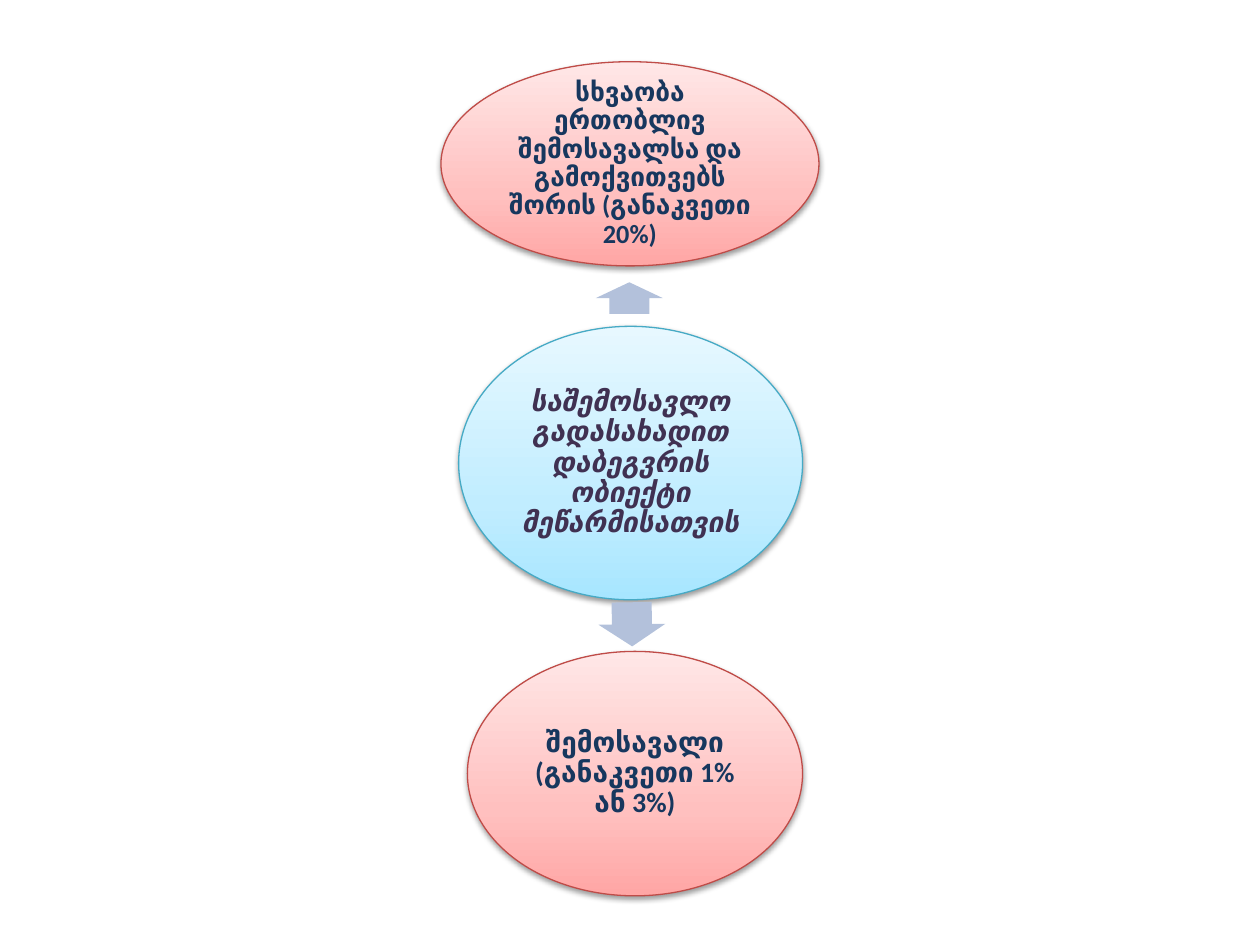
"""Build a slide showing the two income tax bases for an entrepreneur."""
import pptx
import pptx.dml.color
import pptx.enum.shapes
import pptx.enum.text
import pptx.oxml
import pptx.oxml.ns
import pptx.util
from pptx.util import Inches

COLORS = {
    "red_line": "BF4C48", "blue_line": "46AAC5", "arrow": "B3C1DB",
    "navy": "17375E", "purple": "403152", "shadow": "000000",
}
GRADIENTS = {
    "red": ["FFA6A5", "FFC0BF", "FFE7E7"],
    "blue": ["A7E6FF", "C1EDFF", "E7F8FF"],
}
NS = pptx.oxml.ns.nsdecls("a")
SHAPES = pptx.enum.shapes.MSO_SHAPE


def rgb(name):
    return pptx.dml.color.RGBColor.from_string(COLORS[name])


def add_gradient_and_shadow(sp, stops):
    sp.fill.gradient()
    sp.fill.gradient_angle = 90
    gs_list = sp.fill._fill._gradFill.find(pptx.oxml.ns.qn("a:gsLst"))
    for gs in list(gs_list):
        gs_list.remove(gs)
    for pos, color in zip((0, 35, 100), stops):
        gs_list.append(pptx.oxml.parse_xml(
            f'<a:gs {NS} pos="{pos * 1000}"><a:srgbClr val="{color}"/></a:gs>'))
    sp.shadow.inherit = False
    effects = sp._element.spPr.find(pptx.oxml.ns.qn("a:effectLst"))
    effects.append(pptx.oxml.parse_xml(
        f'<a:outerShdw {NS} blurRad="{pptx.util.Pt(3.1)}" dist="{pptx.util.Pt(1.6)}" '
        f'dir="5400000" rotWithShape="0"><a:srgbClr val="{COLORS["shadow"]}">'
        '<a:alpha val="38000"/></a:srgbClr></a:outerShdw>'))


prs = pptx.Presentation()
prs.slide_width, prs.slide_height = Inches(10), Inches(7.5)
s = prs.slides.add_slide(prs.slide_layouts[6])

ellipses = [
    ((3.64, 2.59, 2.73, 2.17), "blue", "purple", 16, True,
     "საშემოსავლო გადასახადით დაბეგვრის ობიექტი მეწარმისათვის"),
    ((3.5, 0.49, 3, 1.62), "red", "navy", 15, False,
     "სხვაობა ერთობლივ შემოსავალსა და გამოქვითვებს შორის (განაკვეთი 20%)"),
    ((3.71, 5.17, 2.66, 1.94), "red", "navy", 16, False,
     "შემოსავალი (განაკვეთი 1% ან 3%)"),
]
for box, tone, text_color, size, italic, text in ellipses:
    sp = s.shapes.add_shape(SHAPES.OVAL, *map(Inches, box))
    add_gradient_and_shadow(sp, GRADIENTS[tone])
    sp.line.color.rgb = rgb(f"{tone}_line")
    sp.line.width = pptx.util.Pt(0.75)
    tf = sp.text_frame
    tf.text = text
    tf.word_wrap = True
    tf.vertical_anchor = pptx.enum.text.MSO_ANCHOR.MIDDLE
    tf.margin_left = tf.margin_right = tf.margin_top = tf.margin_bottom = Inches(0.02)
    p = tf.paragraphs[0]
    p.alignment = pptx.enum.text.PP_ALIGN.CENTER
    p.line_spacing = 0.9
    font = p.runs[0].font
    font.name, font.size = "Calibri", pptx.util.Pt(size)
    font.bold, font.italic = True, italic
    font.color.rgb = rgb(text_color)

for box, rotation in (((4.87, 2.1, 0.25, 0.53), 270), ((4.84, 4.69, 0.35, 0.53), 89.2)):
    sp = s.shapes.add_shape(SHAPES.RIGHT_ARROW, *map(Inches, box))
    sp.rotation = rotation
    sp.adjustments[0], sp.adjustments[1] = 0.6, 0.5
    sp.fill.solid()
    sp.fill.fore_color.rgb = rgb("arrow")
    sp.line.fill.background()
    sp.shadow.inherit = False

prs.save("out.pptx")
